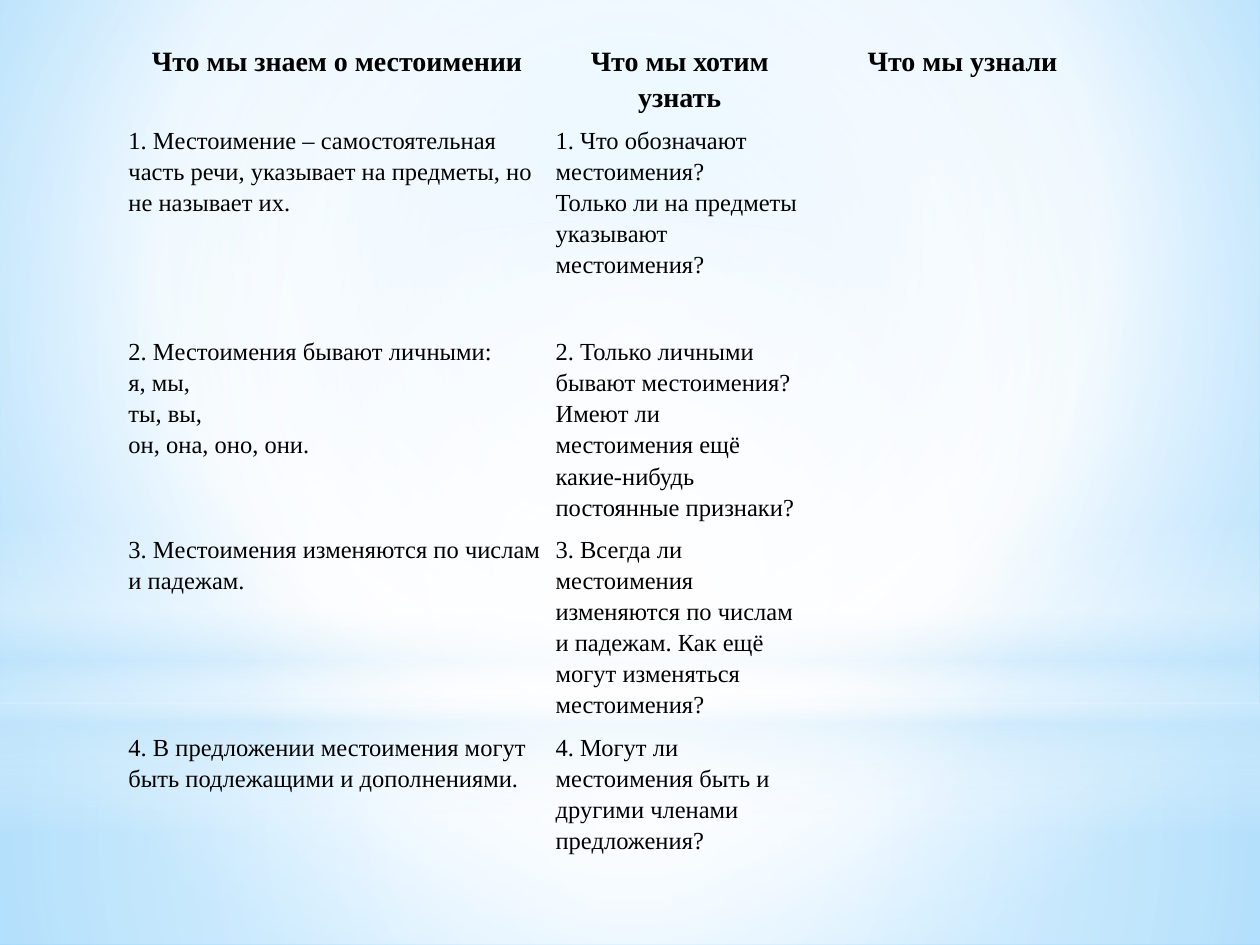
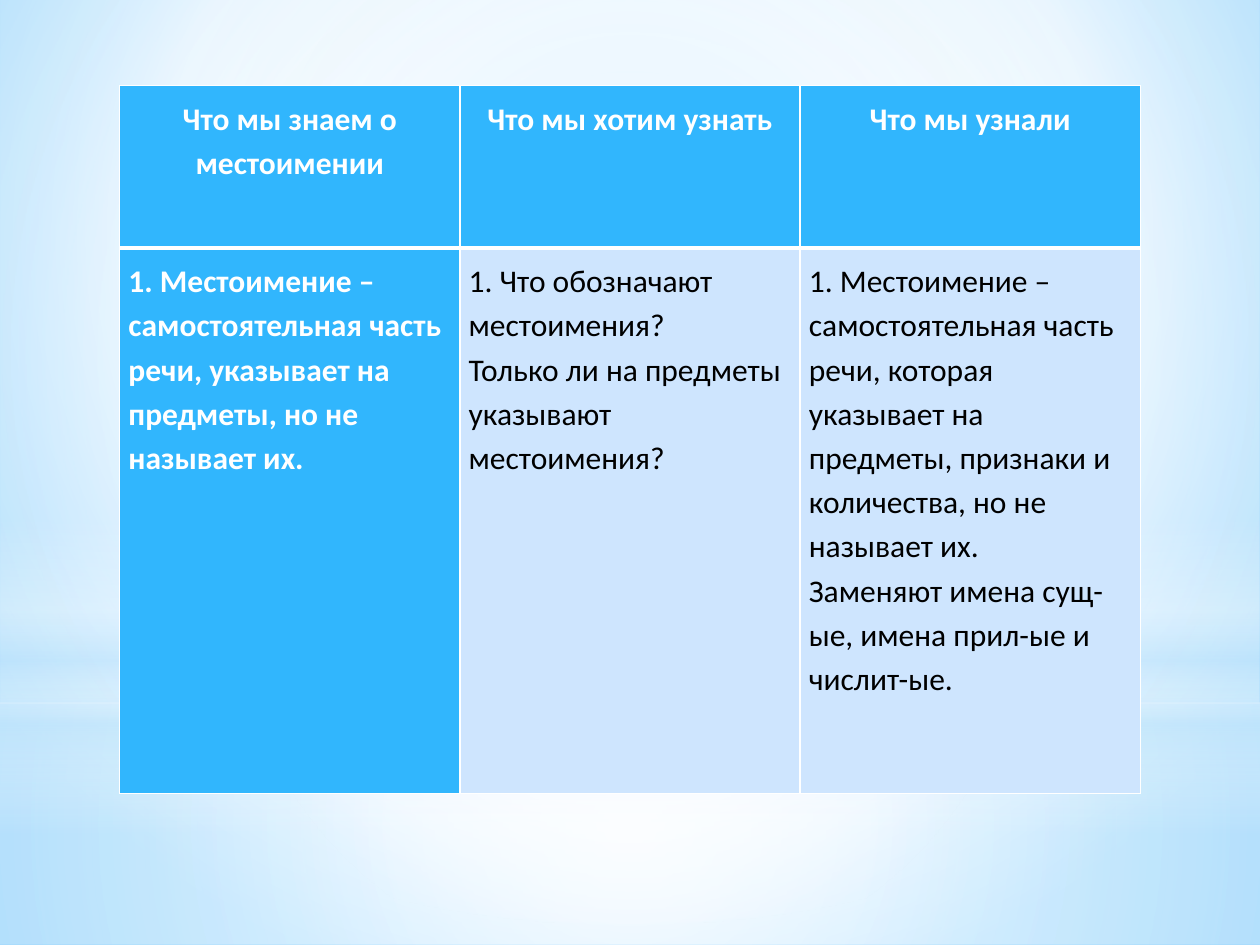
from copy import deepcopy
from dataclasses import dataclass

from pptx import Presentation
from pptx.dml.color import RGBColor
from pptx.enum.shapes import MSO_SHAPE
from pptx.enum.text import PP_ALIGN
from pptx.oxml import parse_xml
from pptx.oxml.ns import nsdecls, qn
from pptx.util import Inches, Pt


@dataclass(frozen=True)
class Theme:
    white: str = "FFFFFF"
    black: str = "000000"
    haze: str = "C6E7FC"
    sky: str = "B0E0FF"
    deep_sky: str = "6BC5FF"
    accent: str = "31B6FD"
    pale: str = "CEE5FE"
    line_spacing: float = 1.15
    space_after: float = 6.8
    thin: int = 1
    thick: int = 3
    plain_table: str = "{2D5ABB26-0587-4C30-8999-92F81FD0307C}"


@dataclass(frozen=True)
class TableLook:
    font: str
    header_size: int
    body_size: int
    margin: float
    filled: bool
    spaced_rows: tuple = ()


THEME = Theme()
PLAIN = TableLook("Times New Roman", 16, 14, 0.04, False, (4,))
COLOURED = TableLook("Calibri", 18, 18, 0.07, True)

HEADERS = ["Что мы знаем о местоимении", "Что мы хотим узнать", "Что мы узнали"]
KNOWN = "1. Местоимение – самостоятельная часть речи, указывает на предметы, но не называет их."
QUESTION = "1. Что обозначают местоимения?\nТолько ли на предметы указывают местоимения?"

OVERVIEW = [
    HEADERS,
    [KNOWN, QUESTION, ""],
    ["2. Местоимения бывают личными:\nя, мы,\nты, вы,\nон, она, оно, они.",
     "2. Только личными бывают местоимения?\n"
     "Имеют ли местоимения ещё какие-нибудь постоянные признаки?", ""],
    ["3. Местоимения изменяются по числам и падежам.",
     "3. Всегда ли местоимения изменяются по числам и падежам. "
     "Как ещё могут изменяться местоимения?", ""],
    ["4. В предложении местоимения могут быть подлежащими и дополнениями.",
     "4. Могут ли местоимения быть и другими членами предложения?", ""],
]
FIRST_ANSWER = [
    HEADERS,
    [KNOWN, QUESTION,
     "1. Местоимение – самостоятельная часть речи, которая указывает на предметы, "
     "признаки и количества, но не называет их.\n"
     "Заменяют имена сущ-ые, имена прил-ые и числит-ые."],
]


# Shared backdrop
def set_gradient(fill, owner, stops, focus=None):
    """Stops are (percent, colour, opacity); without a focus it runs downwards."""
    fill.gradient()
    colours = "".join(
        f'<a:gs pos="{position * 1000}"><a:srgbClr val="{colour}">'
        f'<a:alpha val="{opacity * 1000}"/></a:srgbClr></a:gs>'
        for position, colour, opacity in stops)
    if focus:
        sides = " ".join(f'{side}="{value * 1000}"' for side, value in zip("ltrb", focus))
        direction = f'<a:path path="circle"><a:fillToRect {sides}/></a:path>'
    else:
        direction = '<a:lin ang="5400000" scaled="0"/>'
    gradient = parse_xml(f'<a:gradFill {nsdecls("a")} rotWithShape="1">'
                         f'<a:gsLst>{colours}</a:gsLst>{direction}</a:gradFill>')
    current = next(owner.iter(qn("a:gradFill")))
    current.getparent().replace(current, gradient)


def add_band(page, master, kind, top, height, stops, focus=None):
    """Draw a full-width band and hand it to the master."""
    band = page.shapes.add_shape(kind, 0, Inches(top), Inches(10), Inches(height))
    band.shadow.inherit = False
    band.line.fill.background()
    set_gradient(band.fill, band.element, stops, focus)
    tree = master.shapes.element
    used = [int(item.get("id")) for item in tree.iter(qn("p:cNvPr"))]
    next(band.element.iter(qn("p:cNvPr"))).set("id", str(max(used) + 1))
    tree.append(band.element)


def build_backdrop(page, master):
    white, haze, centre = THEME.white, THEME.haze, (50, 50, 50, 50)
    set_gradient(master.background.fill, master.element.find(qn("p:cSld")).find(qn("p:bg")),
                 [(0, THEME.sky, 100), (60, white, 100), (100, THEME.deep_sky, 100)],
                 (20, 10, 20, 60))
    add_band(page, master, MSO_SHAPE.RECTANGLE, 5.58, 1.92,
             [(0, white, 91), (37, white, 76), (100, haze, 79)], centre)
    add_band(page, master, MSO_SHAPE.RECTANGLE, 0, 5.58,
             [(0, white, 89), (48, white, 62), (100, haze, 79)], centre)
    add_band(page, master, MSO_SHAPE.RECTANGLE, 4.12, 2.5,
             [(0, white, 0), (29, white, 30), (45, haze, 40),
              (55, white, 26), (65, haze, 60), (100, white, 0)])
    add_band(page, master, MSO_SHAPE.OVAL, 1.75, 5.58,
             [(0, white, 100), (56, white, 0)], centre)


# Tables
def set_borders(cell, widths):
    """Widths in points for the left, right, top and bottom edges."""
    properties = cell._tc.get_or_add_tcPr()
    for index, (side, width) in enumerate(zip("LRTB", widths)):
        properties.insert(index, parse_xml(
            f'<a:ln{side} {nsdecls("a")} w="{Pt(width)}"><a:solidFill>'
            f'<a:srgbClr val="{THEME.white}"/></a:solidFill></a:ln{side}>'))


def write_cell(cell, text, look, row, column):
    is_header = row == 0
    emphasised = is_header or (look.filled and column == 0)
    cell.margin_left = cell.margin_right = Inches(look.margin)
    cell.margin_top = cell.margin_bottom = Inches(look.margin)
    if look.filled:
        cell.fill.solid()
        cell.fill.fore_color.rgb = RGBColor.from_string(
            THEME.accent if emphasised else THEME.pale)
        set_borders(cell, (THEME.thin, THEME.thin,
                           THEME.thin if is_header else THEME.thick,
                           THEME.thick if is_header else THEME.thin))
    else:
        cell.fill.background()
    if not text:
        return

    para = cell.text_frame.paragraphs[0]
    para.text = text
    para.line_spacing = THEME.line_spacing
    if is_header:
        para.alignment = PP_ALIGN.CENTER
    if (is_header and column > 0) or row in look.spaced_rows:
        para.space_after = Pt(THEME.space_after)
    for span in para.runs:
        span.font.name = look.font
        span.font.size = Pt(look.header_size if is_header else look.body_size)
        span.font.bold = emphasised
        span.font.color.rgb = RGBColor.from_string(
            THEME.white if look.filled and emphasised else THEME.black)
    # Line breaks take the type size of the text around them
    for line_break in para._p.findall(qn("a:br")):
        line_break.append(deepcopy(para.runs[0].font._element))


def add_text_table(page, left, top, widths, heights, rows, look):
    frame = page.shapes.add_table(len(rows), len(widths), Inches(left), Inches(top),
                                  Inches(sum(widths)), Inches(sum(heights)))
    table = frame.table
    table.first_row = look.filled
    table.horz_banding = False
    next(table._tbl.iter(qn("a:tableStyleId"))).text = THEME.plain_table
    for column, width in zip(table.columns, widths):
        column.width = Inches(width)
    for table_row, height in zip(table.rows, heights):
        table_row.height = Inches(height)
    for row, texts in enumerate(rows):
        for column, text in enumerate(texts):
            write_cell(table.cell(row, column), text, look, row, column)


def main():
    deck = Presentation()
    deck.slide_width, deck.slide_height = Inches(10), Inches(7.5)
    blank = deck.slide_layouts[6]

    overview = deck.slides.add_slide(blank)
    build_backdrop(overview, deck.slide_master)
    add_text_table(overview, 0.98, 0.29, [3.39, 2.05, 2.44],
                   [0.32, 1.68, 1.57, 1.57, 1.09], OVERVIEW, PLAIN)

    answer = deck.slides.add_slide(blank)
    add_text_table(answer, 0.95, 0.68, [2.7] * 3, [1.29, 4.33], FIRST_ANSWER, COLOURED)

    deck.save("out.pptx")


if __name__ == "__main__":
    main()
